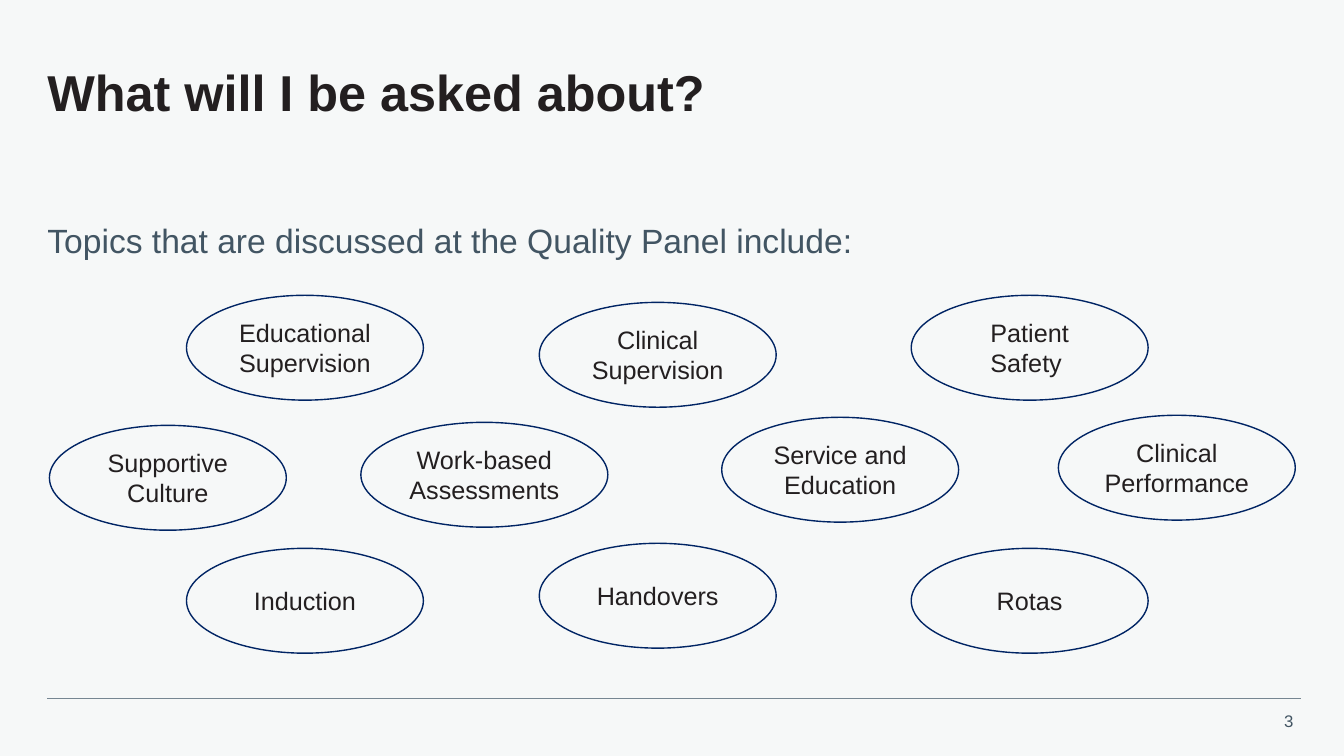
from dataclasses import dataclass
from typing import Any

from lxml.etree import SubElement
from pptx import Presentation
from pptx.dml.color import RGBColor
from pptx.enum.shapes import MSO_CONNECTOR, MSO_SHAPE
from pptx.enum.text import MSO_ANCHOR, MSO_AUTO_SIZE, PP_ALIGN
from pptx.oxml.ns import qn
from pptx.util import Inches, Pt

SLIDE_WIDTH, SLIDE_HEIGHT = Inches(13.333), Inches(7.5)
COLUMN, ROW = SLIDE_WIDTH / 40, SLIDE_HEIGHT / 30


@dataclass(frozen=True)
class Theme:
    """Colours, font and type sizes of the slide."""

    background: RGBColor = RGBColor.from_string("F6F8F8")
    ink: RGBColor = RGBColor.from_string("231F20")
    slate: RGBColor = RGBColor.from_string("425563")
    rule: RGBColor = RGBColor.from_string("768692")
    outline: RGBColor = RGBColor.from_string("002464")
    font: str = "Arial"
    title_size: Pt = Pt(36)
    lead_size: Pt = Pt(24)
    topic_size: Pt = Pt(18)
    number_size: Pt = Pt(12)


@dataclass(frozen=True)
class Box:
    """A place on the slide in grid columns and rows."""

    column: float
    row: float
    columns: float = 7.05
    rows: float = 4.16

    def lengths(self) -> tuple[int, int, int, int]:
        """Return left, top, width and height as slide lengths."""
        return (round(self.column * COLUMN), round(self.row * ROW),
                round(self.columns * COLUMN), round(self.rows * ROW))


@dataclass(frozen=True)
class Topic:
    """A topic of the panel and the place of its ellipse."""

    text: str
    box: Box


THEME = Theme()
LEFT, CENTRE, RIGHT = 5.55, 16.05, 27.12
TOPICS = (
    Topic("Educational Supervision", Box(LEFT, 11.72)),
    Topic("Clinical Supervision", Box(CENTRE, 12)),
    Topic("Patient Safety ", Box(RIGHT, 11.72)),
    Topic("Supportive Culture", Box(1.47, 16.88)),
    Topic("Work-based Assessments", Box(10.74, 16.76, columns=7.35)),
    Topic("Service and Education", Box(21.48, 16.56)),
    Topic("Clinical Performance", Box(31.5, 16.48)),
    Topic("Induction", Box(LEFT, 21.76)),
    Topic("Handovers", Box(CENTRE, 21.56)),
    Topic("Rotas", Box(RIGHT, 21.76)),
)
NO_MARGINS = dict.fromkeys(
    ("margin_left", "margin_top", "margin_right", "margin_bottom"), 0)


def apply(target: Any, values: dict[str, Any]) -> None:
    """Set each named attribute of the target."""
    for name, value in values.items():
        setattr(target, name, value)


def write(shape: Any, text: str, size: Pt, colour: RGBColor, bold: bool = False,
          frame: dict[str, Any] | None = None,
          paragraph_format: dict[str, Any] | None = None) -> None:
    """Put one formatted paragraph of text in a shape."""
    text_frame = shape.text_frame
    text_frame.text = text
    apply(text_frame, {"word_wrap": True, "auto_size": MSO_AUTO_SIZE.NONE}
          | (frame or {}))
    paragraph = text_frame.paragraphs[0]
    apply(paragraph, {"space_before": Pt(0)} | (paragraph_format or {}))
    font = paragraph.runs[0].font
    apply(font, {"name": THEME.font, "size": size, "bold": bold})
    font.color.rgb = colour


def place(shape: Any, box: Box) -> None:
    """Move and size a shape to a grid box."""
    apply(shape, dict(zip(("left", "top", "width", "height"), box.lengths())))


def add_headings(slide: Any) -> None:
    """Fill the title and body placeholders."""
    title, body = slide.shapes.title, slide.placeholders[1]
    place(title, Box(1.41, 1.88, 37.41, 3.8))
    write(title, "What will I be asked about?", THEME.title_size, THEME.ink, True,
          NO_MARGINS | {"vertical_anchor": MSO_ANCHOR.MIDDLE},
          {"alignment": PP_ALIGN.LEFT, "line_spacing": 0.9})
    place(body, Box(1.41, 9.12, 36.12, 2.52))
    write(body, "Topics that are discussed at the Quality Panel include:",
          THEME.lead_size, THEME.slate,
          frame=NO_MARGINS | {"vertical_anchor": MSO_ANCHOR.TOP},
          paragraph_format={"line_spacing": Pt(22), "space_after": Pt(9)})
    properties = body.text_frame.paragraphs[0]._p.get_or_add_pPr()
    properties.set("marL", "0")
    properties.set("indent", "0")
    SubElement(properties, qn("a:buNone"))


def add_topic(slide: Any, topic: Topic) -> None:
    """Draw one outlined ellipse with its topic."""
    ellipse = slide.shapes.add_shape(MSO_SHAPE.OVAL, *topic.box.lengths())
    ellipse.shadow.inherit = False
    ellipse.fill.background()
    ellipse.line.color.rgb = THEME.outline
    ellipse.line.width = Pt(1)
    write(ellipse, topic.text, THEME.topic_size, THEME.ink,
          frame={"vertical_anchor": MSO_ANCHOR.MIDDLE},
          paragraph_format={"alignment": PP_ALIGN.CENTER})


def add_footer(slide: Any) -> None:
    """Draw the bottom rule and the slide number."""
    left, top, width, _ = Box(1.41, 27.72, 37.32, 0).lengths()
    rule = slide.shapes.add_connector(
        MSO_CONNECTOR.STRAIGHT, left, top, left + width, top)
    rule.line.color.rgb = THEME.rule
    rule.line.width = Pt(0.5)
    SubElement(rule._element.spPr, qn("a:effectLst"))
    number = slide.shapes.add_textbox(*Box(37.56, 28, 1.23, 1.2).lengths())
    write(number, "3", THEME.number_size, THEME.slate,
          frame={"word_wrap": False},
          paragraph_format={"alignment": PP_ALIGN.RIGHT})


def main() -> None:
    """Build and save the presentation."""
    presentation = Presentation()
    apply(presentation, {"slide_width": SLIDE_WIDTH, "slide_height": SLIDE_HEIGHT})
    slide = presentation.slides.add_slide(presentation.slide_layouts[1])
    slide.background.fill.solid()
    slide.background.fill.fore_color.rgb = THEME.background
    add_footer(slide)
    add_headings(slide)
    for topic in TOPICS:
        add_topic(slide, topic)
    presentation.save("out.pptx")


if __name__ == "__main__":
    main()
